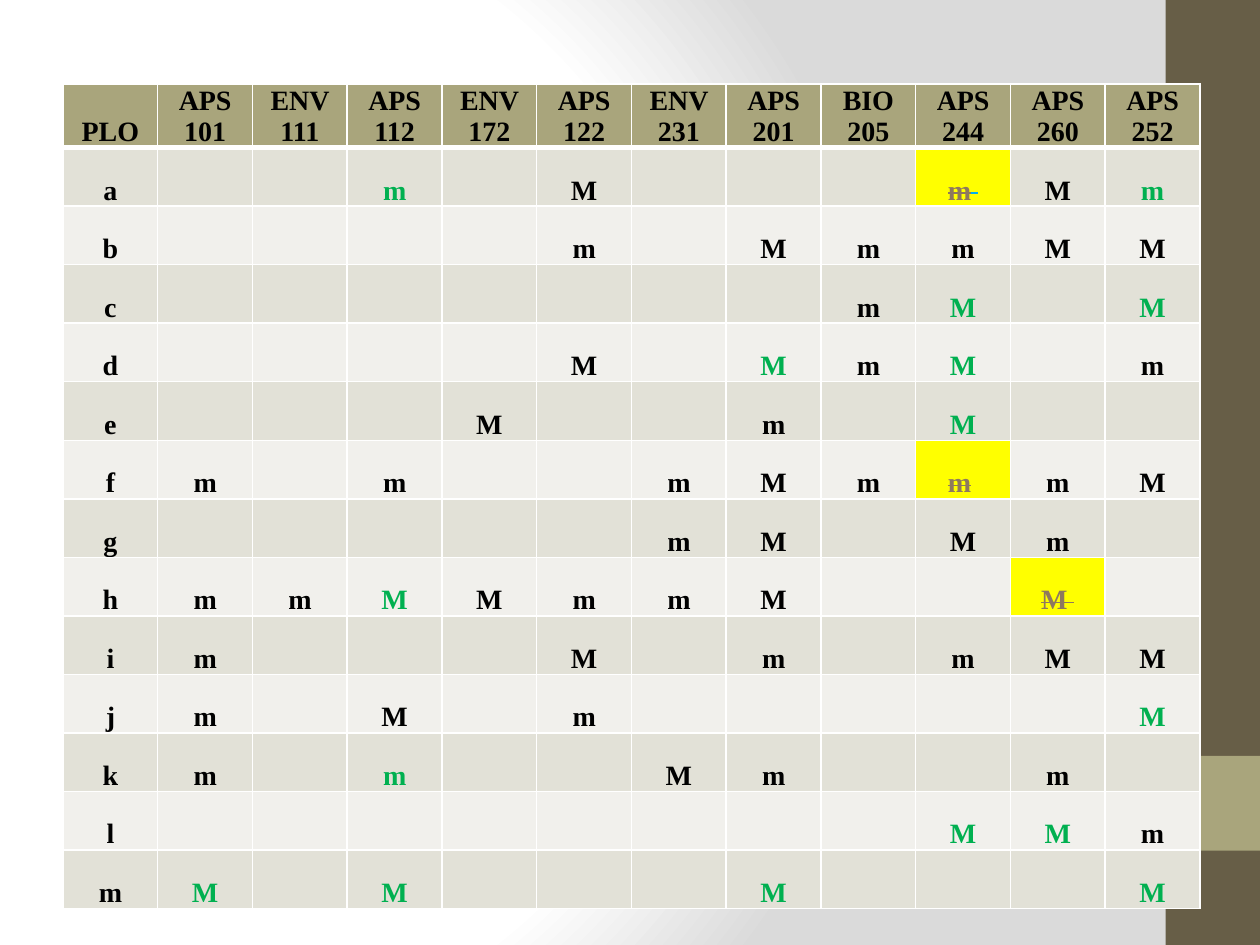
from pptx import Presentation
from pptx.dml.color import RGBColor
from pptx.enum import shapes, text
from pptx.oxml import parse_xml
from pptx.oxml.ns import nsdecls
from pptx.util import Cm, Pt

COURSES = ["PLO", "APS 101", "ENV 111", "APS 112", "ENV 172", "APS 122", "ENV 231",
           "APS 201", "BIO 205", "APS 244", "APS 260", "APS 252"]
# "." blank, "+" green mark, "~" struck mark
MARKS = {
    "a": ". . +m . M . . . ~m M +m",
    "b": ". . . . m . M m m M M",
    "c": ". . . . . . . m +M . +M",
    "d": ". . . . M . +M m +M . m",
    "e": ". . . M . . m . +M . .",
    "f": "m . m . . m M m ~m m M",
    "g": ". . . . . m M . M m .",
    "h": "m m +M M m m M . . ~M .",
    "i": "m . . . M . m . m M M",
    "j": "m . M . m . . . . . +M",
    "k": "m . +m . . M m . . m .",
    "l": ". . . . . . . . +M +M m",
    "m": "+M . +M . . . +M . . . +M",
}
STRUCK = {
    "a": [("m", "struck", True), (" ", "blue", True)],
    "f": [("m", "struck", True), (" ", "struck", False)],
    "h": [("M ", "struck", True)],
}
THEME = dict(
    font="Times New Roman", size=Pt(16), black="000000", green="00B050", struck="8E795E",
    blue="00B0F0", header="A9A57C", bands=("F1F0EC", "E2E1D7"), flag="FFFF00",
    border="FFFFFF", thin=Pt(1), thick=Pt(3), side="675E47",
    glow=((0, "FFFFFF"), (75, "FFFFFF"), (100, "DADADA")),
)
CELL = dict(margin_left=Cm(0.03), margin_right=Cm(0.03), margin_top=Cm(0.03),
            margin_bottom=Cm(0), vertical_anchor=text.MSO_ANCHOR.BOTTOM)
FONT = dict(name=THEME["font"], size=THEME["size"], bold=True)
SIDE_BLOCKS = [(0, 19.05, "side"), (15.24, 1.91, "header")]
COL_W, ROW_H = Cm(1.91), Cm(1.18)


def apply(obj, values):
    for name, value in values.items():
        setattr(obj, name, value)


def set_background(s):
    stops = "".join(f'<a:gs pos="{pos * 1000}"><a:srgbClr val="{color}"/></a:gs>'
                    for pos, color in THEME["glow"])
    s.element.cSld.insert(0, parse_xml(
        f'<p:bg {nsdecls("p", "a")}><p:bgPr><a:gradFill rotWithShape="1"><a:gsLst>{stops}</a:gsLst>'
        '<a:path path="circle"><a:fillToRect l="20000" t="50000" r="100000" b="50000"/></a:path>'
        '</a:gradFill><a:effectLst/></p:bgPr></p:bg>'))


def set_borders(cell, row):
    widths = {side: THEME["thin"] for side in ("lnL", "lnR", "lnT", "lnB")}
    if row < 2:
        widths["lnT" if row else "lnB"] = THEME["thick"]
    tc_pr = cell._tc.get_or_add_tcPr()
    for side, width in widths.items():
        tc_pr.append(parse_xml(
            f'<a:{side} {nsdecls("a")} w="{width}"><a:solidFill>'
            f'<a:srgbClr val="{THEME["border"]}"/></a:solidFill></a:{side}>'))


def fill_cell(cell, row, runs, color):
    apply(cell, CELL)
    set_borders(cell, row)
    cell.fill.solid()
    cell.fill.fore_color.rgb = RGBColor.from_string(color)
    p = cell.text_frame.paragraphs[0]
    p.alignment = text.PP_ALIGN.CENTER
    for words, ink, strike in runs:
        r = p.add_run()
        r.text = words
        apply(r.font, FONT)
        r.font.color.rgb = RGBColor.from_string(THEME[ink])
        if strike:
            r._r.get_or_add_rPr().set("strike", "sngStrike")


def mark_runs(plo, mark):
    if mark == ".":
        return []
    if mark[0] == "~":
        return STRUCK[plo]
    return [(mark[-1], "green" if mark[0] == "+" else "black", False)]


def main():
    prs = Presentation()
    prs.slide_width, prs.slide_height = Cm(25.4), Cm(19.05)
    s = prs.slides.add_slide(prs.slide_layouts[6])
    set_background(s)
    for top, height, color in SIDE_BLOCKS:
        sp = s.shapes.add_shape(shapes.MSO_SHAPE.RECTANGLE, Cm(23.5), Cm(top), Cm(1.9), Cm(height))
        sp.shadow.inherit = False
        sp.fill.solid()
        sp.fill.fore_color.rgb = RGBColor.from_string(THEME[color])
        sp.line.fill.background()

    n_rows, n_cols = len(MARKS) + 1, len(COURSES)
    table = s.shapes.add_table(n_rows, n_cols, Cm(1.27), Cm(1.69),
                               COL_W * n_cols, ROW_H * n_rows).table
    for col in table.columns:
        col.width = COL_W
    for row in table.rows:
        row.height = ROW_H
    for j, course in enumerate(COURSES):
        fill_cell(table.cell(0, j), 0, [(course, "black", False)], THEME["header"])
    for i, (plo, marks) in enumerate(MARKS.items(), 1):
        for j, mark in enumerate([plo] + marks.split()):
            color = THEME["flag"] if mark[0] == "~" else THEME["bands"][i % 2]
            fill_cell(table.cell(i, j), i, mark_runs(plo, mark), color)
    prs.save("out.pptx")


if __name__ == "__main__":
    main()
